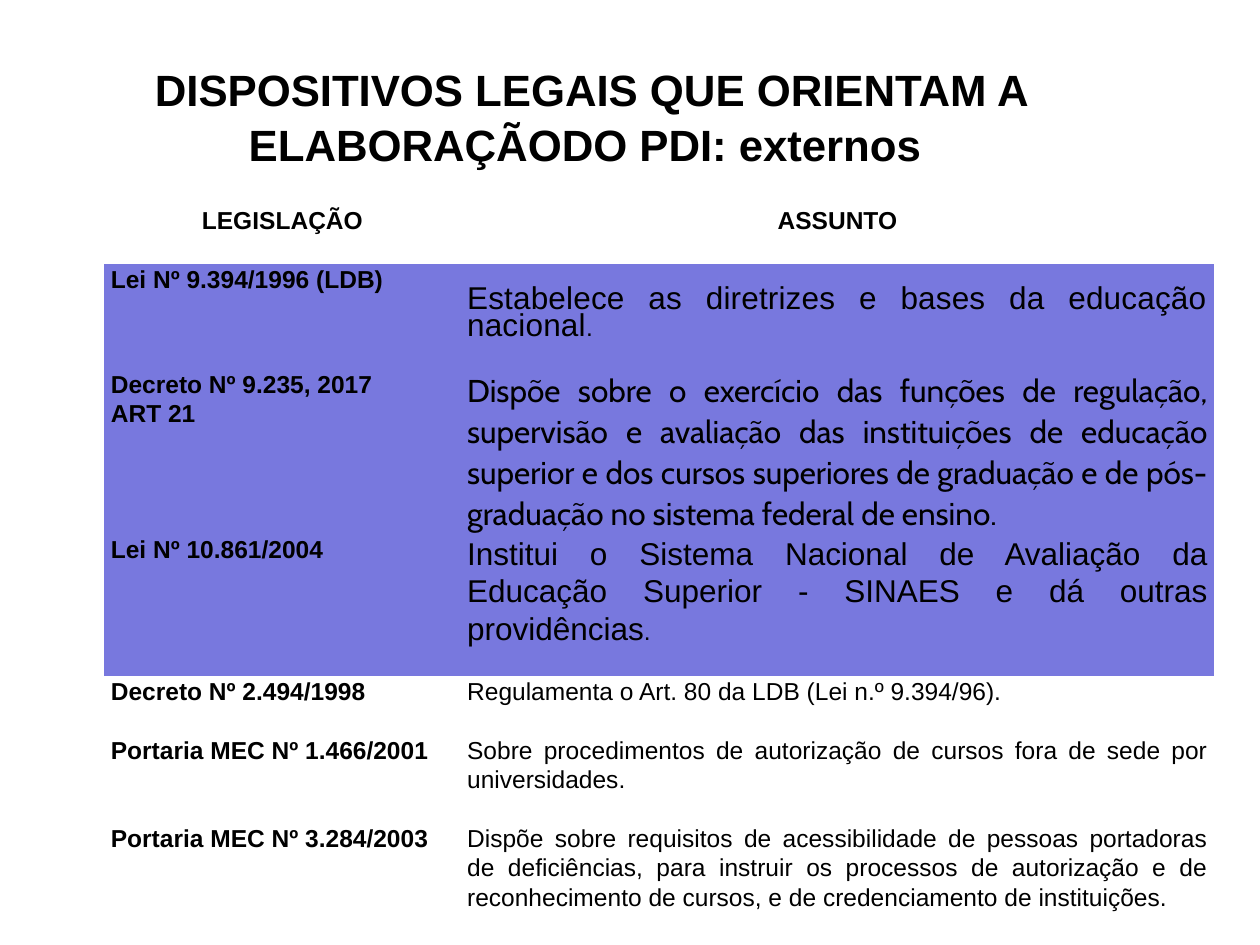
from pptx import Presentation
from pptx.dml.color import RGBColor
from pptx.enum.text import MSO_ANCHOR, PP_ALIGN
from pptx.oxml.ns import qn
from pptx.util import Pt
from lxml.etree import SubElement

HUES = {"ink": "000000", "band": "7878DE", "pale": "FFFFFF"}
PLAIN = "{2D5ABB26-0587-4C30-8999-92F81FD0307C}"
LEFT, MID, FULL = PP_ALIGN.LEFT, PP_ALIGN.CENTER, PP_ALIGN.JUSTIFY

TITLE = "DISPOSITIVOS LEGAIS QUE ORIENTAM A ELABORAÇÃODO PDI: externos "
HEADS = ["LEGISLAÇÃO", "ASSUNTO"]
LAWS = [
    (60, "band", ["Lei Nº 9.394/1996 (LDB)"],
     "Estabelece as diretrizes e bases da educação nacional",
     {"size": 18, "lead": Pt(15), "track": 10, "stop": "."}),
    (94.3, "band", ["Decreto Nº 9.235, 2017", "ART 21"],
     "Dispõe sobre o exercício das funções de regulação, supervisão e "
     "avaliação das instituições de educação superior e dos cursos "
     "superiores de graduação e de pós-graduação no sistema federal de "
     "ensino.",
     {"size": 18, "face": "Cabin"}),
    (81.1, "band", ["Lei Nº 10.861/2004"],
     "Institui o Sistema Nacional de Avaliação da Educação Superior - "
     "SINAES e dá outras providências",
     {"size": 18, "stop": "."}),
    (33.7, None, ["Decreto Nº 2.494/1998"],
     "Regulamenta o Art. 80 da LDB (Lei n.º 9.394/96).", {}),
    (50.3, "pale", ["Portaria MEC Nº 1.466/2001"],
     "Sobre procedimentos de autorização de cursos fora de sede por "
     "universidades.", {}),
    (70, None, ["Portaria MEC Nº 3.284/2003"],
     "Dispõe sobre requisitos de acessibilidade de pessoas portadoras de "
     "deficiências, para instruir os processos de autorização e de "
     "reconhecimento de cursos, e de credenciamento de instituições.", {}),
]


class Deck:
    def __init__(self):
        self.show = Presentation()
        self.show.slide_width, self.show.slide_height = Pt(720), Pt(540)
        self.slide = self.show.slides.add_slide(self.show.slide_layouts[6])

    def text(self, para, text, size=14, bold=False, align=LEFT, lead=1.07,
             face="Arial", track=0, stop=""):
        para.alignment, para.line_spacing = align, lead
        font = para.font
        font.size, font.bold, font.name = Pt(size), bold, face
        font.color.rgb = RGBColor.from_string(HUES["ink"])
        run = para.add_run()
        run.text = text
        if track:
            run.font._element.set("spc", str(track))
        if stop:
            dot = para.add_run()
            dot.text = stop
            dot.font.size = Pt(14)

    def title(self, text, left, top, width, height):
        box = self.slide.shapes.add_textbox(
            Pt(left), Pt(top), Pt(width), Pt(height))
        frame = box.text_frame
        frame.word_wrap = True
        frame.vertical_anchor = MSO_ANCHOR.MIDDLE
        self.text(frame.paragraphs[0], text, 25, True, MID, 1.05)

    def table(self, left, top, cols, rows):
        frame = self.slide.shapes.add_table(
            len(rows), len(cols), Pt(left), Pt(top),
            Pt(sum(cols)), Pt(sum(rows)))
        grid = frame.table
        grid.first_row = grid.horz_banding = False
        frame._element.find(".//" + qn("a:tableStyleId")).text = PLAIN
        for col, width in zip(grid.columns, cols):
            col.width = Pt(width)
        for row, height in zip(grid.rows, rows):
            row.height = Pt(height)
        return grid

    def cell(self, cell, lines, fill=None, anchor=MSO_ANCHOR.TOP, gap=0,
             **style):
        cell.margin_left = cell.margin_right = Pt(3.75)
        cell.margin_top, cell.margin_bottom = Pt(gap), 0
        cell.vertical_anchor = anchor
        if fill:
            cell.fill.solid()
            cell.fill.fore_color.rgb = RGBColor.from_string(HUES[fill])
            if fill == "pale":
                tone = cell._tc.find(".//" + qn("a:tcPr")
                                     + "//" + qn("a:srgbClr"))
                SubElement(tone, qn("a:alpha")).set("val", "20000")
        else:
            cell.fill.background()
        frame = cell.text_frame
        for i, line in enumerate(lines):
            para = frame.add_paragraph() if i else frame.paragraphs[0]
            self.text(para, line, **style)


def main():
    deck = Deck()
    deck.title(TITLE, 42.5, 20.9, 590.4, 90)
    grid = deck.table(59.6, 100.1, [203.6, 430.7],
                      [50.9] + [law[0] for law in LAWS])
    for col, head in enumerate(HEADS):
        deck.cell(grid.cell(0, col), [head], anchor=MSO_ANCHOR.MIDDLE,
                  bold=True, align=MID)
    for row, (_, fill, names, topic, style) in enumerate(LAWS, 1):
        deck.cell(grid.cell(row, 0), names, fill, bold=True)
        gap = 15 if "lead" in style else 0
        deck.cell(grid.cell(row, 1), [topic], fill, gap=gap, align=FULL,
                  **style)
    deck.show.save("out.pptx")


if __name__ == "__main__":
    main()
